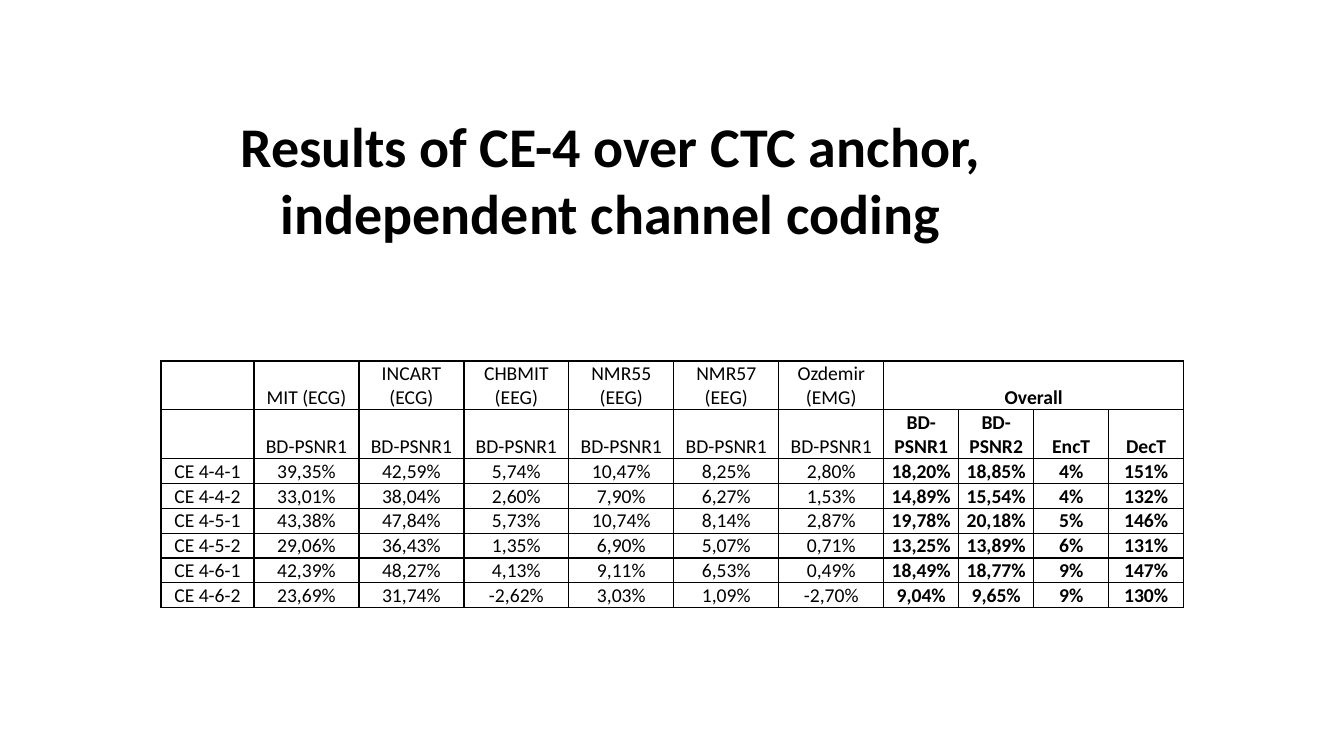
from dataclasses import dataclass

from lxml import etree
from pptx import Presentation
from pptx.dml.color import RGBColor
from pptx.enum.text import MSO_ANCHOR, PP_ALIGN
from pptx.oxml.ns import qn
from pptx.util import Pt

CENTER = PP_ALIGN.CENTER
MIDDLE = MSO_ANCHOR.MIDDLE
BOTTOM = MSO_ANCHOR.BOTTOM
TITLE_ONLY = 5


@dataclass(frozen=True)
class Theme:
    font: str = "Calibri"
    ink: str = "000000"
    title: int = 40
    body: int = 14
    rule: int = 1


THEME = Theme()

TITLE = "Results of CE-4 over CTC anchor, independent channel coding"
SETS = ["MIT (ECG)", "INCART (ECG)", "CHBMIT (EEG)", "NMR55 (EEG)", "NMR57 (EEG)", "Ozdemir (EMG)"]
TOTALS = ["BD-PSNR1", "BD-PSNR2", "EncT", "DecT"]
FIRST = 1 + len(SETS)
ROWS = [
    ["", *SETS, "Overall", "", "", ""],
    ["", *["BD-PSNR1"] * len(SETS), *TOTALS],
    ["CE 4-4-1", "39,35%", "42,59%", "5,74%", "10,47%", "8,25%", "2,80%", "18,20%", "18,85%", "4%", "151%"],
    ["CE 4-4-2", "33,01%", "38,04%", "2,60%", "7,90%", "6,27%", "1,53%", "14,89%", "15,54%", "4%", "132%"],
    ["CE 4-5-1", "43,38%", "47,84%", "5,73%", "10,74%", "8,14%", "2,87%", "19,78%", "20,18%", "5%", "146%"],
    ["CE 4-5-2", "29,06%", "36,43%", "1,35%", "6,90%", "5,07%", "0,71%", "13,25%", "13,89%", "6%", "131%"],
    ["CE 4-6-1", "42,39%", "48,27%", "4,13%", "9,11%", "6,53%", "0,49%", "18,49%", "18,77%", "9%", "147%"],
    ["CE 4-6-2", "23,69%", "31,74%", "-2,62%", "3,03%", "1,09%", "-2,70%", "9,04%", "9,65%", "9%", "130%"],
]
WIDTHS = [93] + [105] * len(SETS) + [75] * len(TOTALS)
HEIGHTS = [48] * 2 + [24] * (len(ROWS) - 2)


def px(count):
    return round(count * 914400 / 100.8)


def style(para, size, bold):
    para.alignment = CENTER
    para.font.name = THEME.font
    para.font.size = Pt(size)
    para.font.bold = bold
    para.font.color.rgb = RGBColor.from_string(THEME.ink)


def add_title(slide, text, left, top, width, height):
    title = slide.shapes.title
    title.left, title.top = px(left), px(top)
    title.width, title.height = px(width), px(height)
    frame = title.text_frame
    frame.text = text
    frame.word_wrap = True
    frame.vertical_anchor = MIDDLE
    style(frame.paragraphs[0], THEME.title, True)


def add_rules(cell):
    props = cell._tc.get_or_add_tcPr()
    for side in ("a:lnL", "a:lnR", "a:lnT", "a:lnB"):
        line = etree.SubElement(props, qn(side), w=str(Pt(THEME.rule)))
        fill = etree.SubElement(line, qn("a:solidFill"))
        etree.SubElement(fill, qn("a:srgbClr"), val=THEME.ink)


def fill_cell(cell, text, bold):
    cell.text = text
    cell.vertical_anchor = BOTTOM
    cell.margin_left = cell.margin_right = cell.margin_top = px(1)
    cell.margin_bottom = 0
    style(cell.text_frame.paragraphs[0], THEME.body, bold)
    add_rules(cell)
    cell.fill.background()


def add_results(slide, left, top):
    frame = slide.shapes.add_table(
        len(ROWS), len(WIDTHS), px(left), px(top), px(sum(WIDTHS)), px(sum(HEIGHTS))
    )
    table = frame.table
    table.first_row = table.horz_banding = False
    for col, width in zip(table.columns, WIDTHS):
        col.width = px(width)
    for row, height, texts in zip(table.rows, HEIGHTS, ROWS):
        row.height = px(height)
        for index, text in enumerate(texts):
            fill_cell(row.cells[index], text, index >= FIRST)
    table.cell(0, FIRST).merge(table.cell(0, len(WIDTHS) - 1))


def main():
    deck = Presentation()
    deck.slide_width, deck.slide_height = px(1344), px(756)
    slide = deck.slides.add_slide(deck.slide_layouts[TITLE_ONLY])
    add_title(slide, TITLE, 106, 106, 1009, 146)
    add_results(slide, 161, 361)
    deck.save("out.pptx")


if __name__ == "__main__":
    main()
